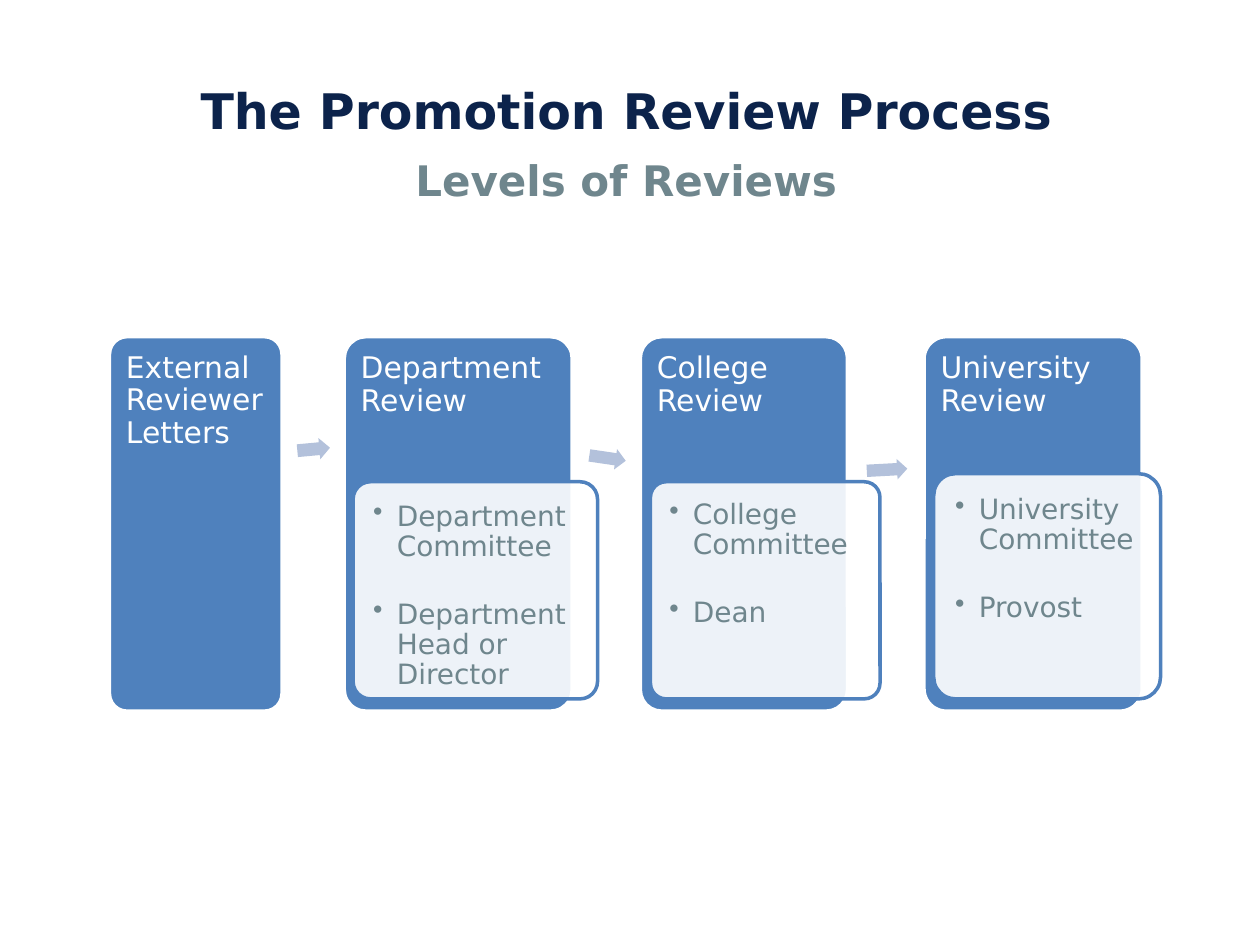
from typing import NamedTuple

from lxml.etree import SubElement
from pptx import Presentation
from pptx.dml.color import RGBColor
from pptx.enum.shapes import MSO_SHAPE as Kind
from pptx.enum.text import MSO_ANCHOR as Anchor, PP_ALIGN as Align
from pptx.oxml.ns import qn
from pptx.util import Pt

FONT = "DejaVu Sans"
BLUE, PALE, WHITE = "4F81BD", "B3C1DB", "FFFFFF"
NAVY, GRAY = "0C234B", "6F868D"
TOP, TALL, BASE = 192.4, 214, 399.4


class Panel(NamedTuple):
    left: float
    top: float
    width: float
    curve: float
    inset: float
    items: tuple[str, ...]


class Card(NamedTuple):
    left: float
    width: float
    curve: float
    lines: tuple[str, ...]
    panel: Panel | None = None


class Arrow(NamedTuple):
    left: float
    top: float
    width: float
    height: float
    turn: float


CARDS = (
    Card(62.6, 98.6, 10, ("External Reviewer", "Letters")),
    Card(196.7, 130.3, 12.5, ("Department Review",),
         Panel(201.8, 275.3, 139.7, 10, 11.5,
               ("Department Committee", "Department Head or Director"))),
    Card(365.9, 118.4, 12.2, ("College", "Review"),
         Panel(371.7, 275.3, 131.2, 9, 10.8, ("College Committee", "Dean"))),
    Card(528, 124.7, 12.8, ("University", "Review"),
         Panel(533.6, 270.7, 129.6, 12.5, 12.2,
               ("University Committee", "Provost"))),
)
ARROWS = (
    Arrow(169.9, 250.6, 18.7, 12.2, -5.3),
    Arrow(336.7, 255.9, 21, 11.8, 8.4),
    Arrow(495.3, 262.6, 23.2, 11.7, -3.1),
)


def tint(code: str) -> RGBColor:
    return RGBColor.from_string(code)


def write(para, text: str, size: float, color: str, bold: bool = False) -> None:
    run = para.add_run()
    run.text = text
    font = run.font
    font.name, font.size, font.bold = FONT, Pt(size), bold
    font.color.rgb = tint(color)


def round_box(slide, left: float, top: float, width: float, height: float,
              curve: float, inset: float, fill: str, line: str):
    box = slide.shapes.add_shape(
        Kind.ROUNDED_RECTANGLE, Pt(left), Pt(top), Pt(width), Pt(height))
    box.adjustments[0] = curve / min(width, height)
    box.shadow.inherit = False
    box.fill.solid()
    box.fill.fore_color.rgb = tint(fill)
    box.line.color.rgb = tint(line)
    box.line.width = Pt(2)
    frame = box.text_frame
    frame.word_wrap = True
    frame.vertical_anchor = Anchor.TOP
    pad = Pt(inset - 0.29 * curve)
    frame.margin_left = frame.margin_right = frame.margin_top = pad
    frame.margin_bottom = 0
    return box


def draw_panel(slide, panel: Panel) -> None:
    box = round_box(slide, panel.left, panel.top, panel.width,
                    BASE - panel.top, panel.curve, panel.inset, WHITE, BLUE)
    shade = box.fill._xPr.find(qn("a:solidFill"))[0]
    SubElement(shade, qn("a:alpha"), val="90000")
    frame = box.text_frame
    for spot, item in enumerate(panel.items):
        para = frame.add_paragraph() if spot else frame.paragraphs[0]
        props = para._p.get_or_add_pPr()
        props.set("marL", str(Pt(13.5)))
        props.set("indent", str(Pt(-13.5)))
        SubElement(props, qn("a:buChar"), char="•")
        para.alignment = Align.LEFT
        para.line_spacing = 0.9
        para.space_before = Pt(21.5 if spot else 0)
        write(para, item, 16, GRAY)


def draw_card(slide, card: Card) -> None:
    box = round_box(slide, card.left, TOP, card.width, TALL,
                    card.curve, 9.4, BLUE, WHITE)
    para = box.text_frame.paragraphs[0]
    para.alignment = Align.LEFT
    para.line_spacing = 0.9
    for spot, line in enumerate(card.lines):
        if spot:
            para.add_line_break()
        write(para, line, 17, WHITE)
    if card.panel:
        draw_panel(slide, card.panel)


def draw_arrow(slide, arrow: Arrow) -> None:
    shape = slide.shapes.add_shape(
        Kind.RIGHT_ARROW, Pt(arrow.left), Pt(arrow.top),
        Pt(arrow.width), Pt(arrow.height))
    shape.adjustments[0], shape.adjustments[1] = 0.6, 0.5
    shape.rotation = arrow.turn
    shape.shadow.inherit = False
    shape.fill.solid()
    shape.fill.fore_color.rgb = tint(PALE)
    shape.line.fill.background()


def draw_head(slide, text: str, left: float, top: float, width: float,
              height: float, size: float, color: str, anchor: Anchor) -> None:
    box = slide.shapes.add_textbox(Pt(left), Pt(top), Pt(width), Pt(height))
    frame = box.text_frame
    frame.word_wrap = True
    frame.vertical_anchor = anchor
    para = frame.paragraphs[0]
    para.alignment = Align.CENTER
    write(para, text, size, color, True)


def main() -> None:
    deck = Presentation()
    deck.slide_width, deck.slide_height = Pt(720), Pt(540)
    slide = deck.slides.add_slide(deck.slide_layouts[6])
    for card in CARDS:
        draw_card(slide, card)
    for arrow in ARROWS:
        draw_arrow(slide, arrow)
    draw_head(slide, "The Promotion Review Process",
              60.5, 9.4, 594.7, 107.3, 28, NAVY, Anchor.MIDDLE)
    draw_head(slide, "Levels of Reviews",
              65.5, 85, 584.6, 36, 24, GRAY, Anchor.TOP)
    deck.save("out.pptx")


if __name__ == "__main__":
    main()
